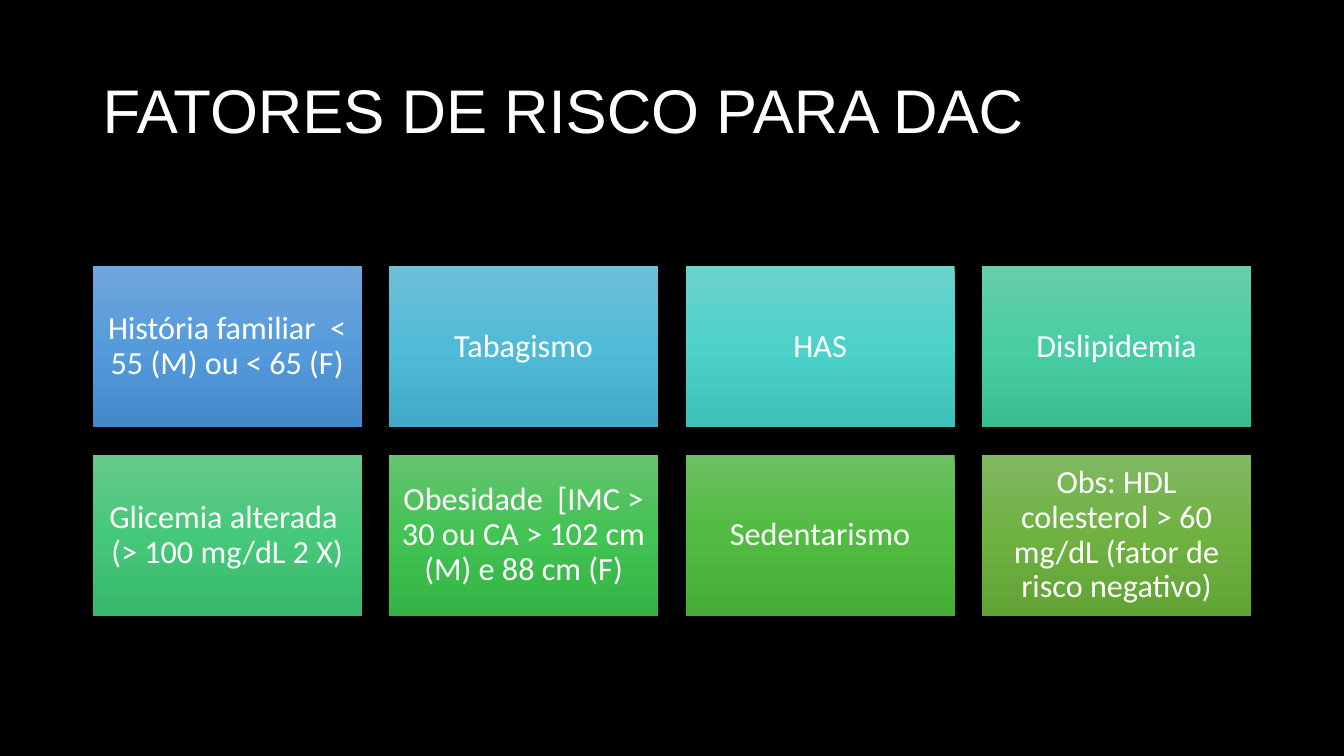
from copy import deepcopy
from pptx import Presentation
from pptx.dml.color import RGBColor as Rgb
from pptx.enum.shapes import MSO_SHAPE as Form
from pptx.enum.text import MSO_ANCHOR as Anchor, PP_ALIGN as Align
from pptx.oxml.ns import qn
from pptx.util import Inches, Pt

CARDS = [
    ("História familiar  < 55 (M) ou < 65 (F)", "71A6DB", "559BDB", "448ACA"),
    ("Tabagismo", "6EBFD7", "51BBD7", "41AAC6"),
    ("HAS", "6BD2CC", "4DD2CA", "3DC1B9"),
    ("Dislipidemia", "68CEAA", "49CDA2", "3ABD92"),
    ("Glicemia alterada  (> 100 mg/dL 2 X)", "66C98A", "46C87A", "37B86B"),
    ("Obesidade  [IMC > 30 ou CA > 102 cm (M) e 88 cm (F)",
     "64C46F", "43C354", "35B346"),
    ("Sedentarismo", "6CBF62", "51BC41", "45AC35"),
    ("Obs: HDL colesterol > 60 mg/dL (fator de risco negativo)",
     "81B861", "6FB242", "62A336"),
]


def tint(code):
    return Rgb.from_string(code)


class Deck:
    ink = "FFFFFF"
    cols = 4
    left, top = 0.92, 2.64
    wide, high, gap = 2.67, 1.6, 0.27

    def __init__(self, slide):
        self.slide = slide

    def ground(self, code):
        fill = self.slide.background.fill
        fill.solid()
        fill.fore_color.rgb = tint(code)

    def label(self, frame, text, size, font, align):
        frame.text = text
        frame.word_wrap = True
        frame.vertical_anchor = Anchor.MIDDLE
        para = frame.paragraphs[0]
        para.alignment = align
        para.line_spacing = 0.9
        for run in para.runs:
            run.font.size = Pt(size)
            run.font.name = font
            run.font.color.rgb = tint(self.ink)

    def title(self, text):
        span = self.cols * (self.wide + self.gap) - self.gap
        box = self.slide.shapes.add_textbox(
            Inches(self.left), Inches(0.4), Inches(span), Inches(1.45))
        self.label(box.text_frame, text, 44, "Arial", Align.LEFT)

    def blend(self, shape, codes):
        fill = shape.fill
        fill.gradient()
        fill.gradient_angle = 270
        stops = shape._element.spPr.find(qn("a:gradFill")).find(qn("a:gsLst"))
        stops.insert(1, deepcopy(stops[0]))
        for stop, code, spot in zip(fill.gradient_stops, codes, (0, 0.5, 1)):
            stop.color.rgb = tint(code)
            stop.position = spot

    def card(self, place, text, codes):
        row, col = divmod(place, self.cols)
        shape = self.slide.shapes.add_shape(
            Form.RECTANGLE,
            Inches(self.left + col * (self.wide + self.gap)),
            Inches(self.top + row * (self.high + self.gap)),
            Inches(self.wide), Inches(self.high))
        shape.shadow.inherit = False
        shape.line.fill.background()
        self.blend(shape, codes)
        frame = shape.text_frame
        frame.margin_left = frame.margin_right = Inches(0.1)
        frame.margin_top = frame.margin_bottom = Inches(0.1)
        self.label(frame, text, 23, "Calibri", Align.CENTER)


def main():
    show = Presentation()
    show.slide_width, show.slide_height = Inches(13.33), Inches(7.5)
    deck = Deck(show.slides.add_slide(show.slide_layouts[6]))
    deck.ground("000000")
    deck.title("FATORES DE RISCO PARA DAC")
    for place, (text, *codes) in enumerate(CARDS):
        deck.card(place, text, codes)
    show.save("out.pptx")


if __name__ == "__main__":
    main()
